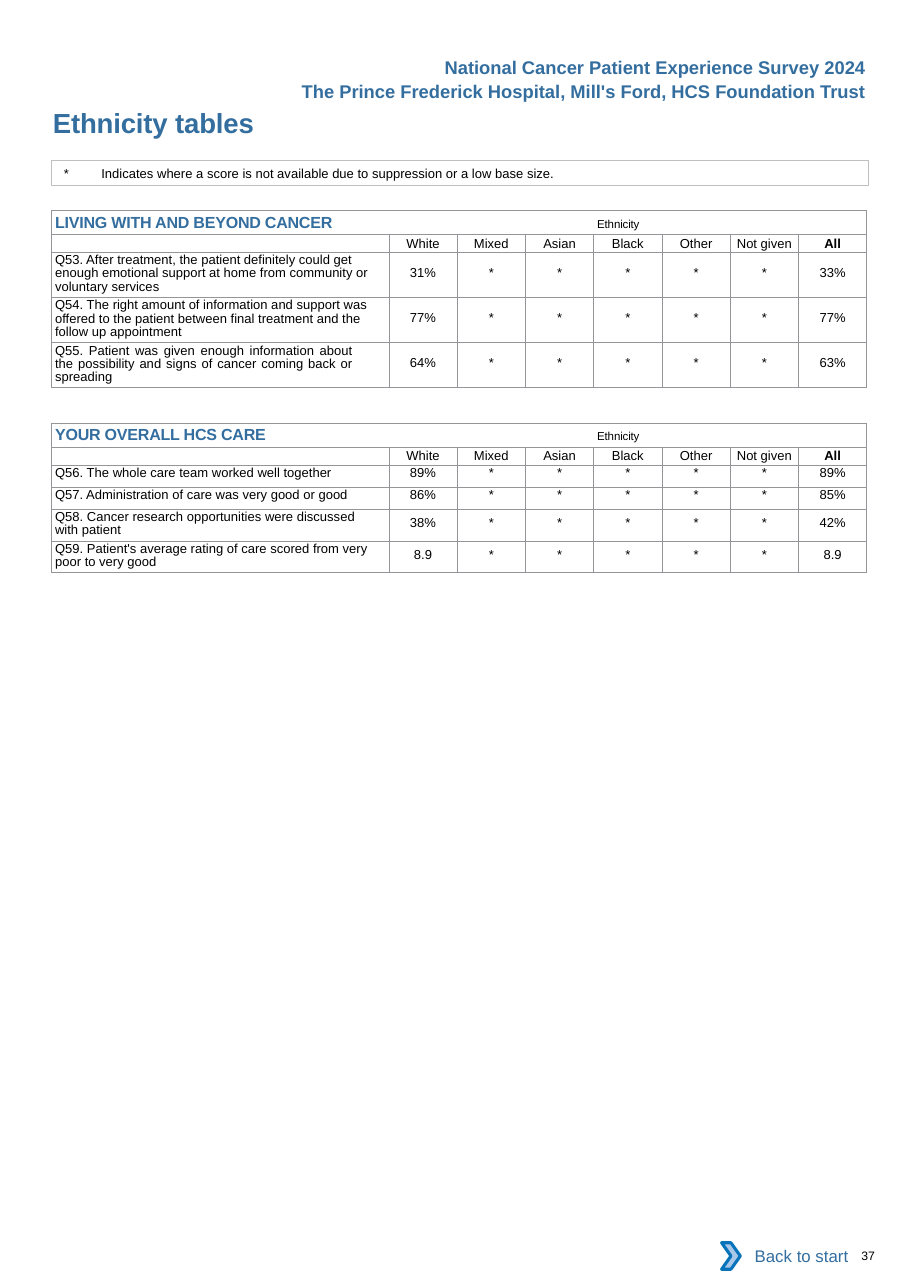
"""Build the ethnicity tables page of the patient experience survey."""
from dataclasses import dataclass
from typing import Optional

from lxml.etree import SubElement
from pptx import Presentation
from pptx.dml.color import RGBColor
from pptx.enum.shapes import MSO_SHAPE as Shape
from pptx.enum.text import MSO_ANCHOR as Anchor, PP_ALIGN as Align
from pptx.oxml.ns import qn
from pptx.util import Inches, Pt

BLUE, BLACK, WHITE = "336E9F", "000000", "FFFFFF"
GRID_GREY, NOTE_GREY = "939598", "BFBFBF"
LEFT, WIDTH = 0.47, 7.41
LABEL_WIDTH, GROUP_WIDTH = 3.06, 0.62
HEADING_HEIGHT, HEADER_HEIGHT = 0.22, 0.16
GROUPS = ("White", "Mixed", "Asian", "Black", "Other", "Not given", "All")


@dataclass(frozen=True)
class Style:
    size: float
    color: str = BLACK
    bold: bool = False
    spacing: float = 0


@dataclass(frozen=True)
class Question:
    text: str
    white: str
    overall: str
    lines: int
    justified: bool = False


@dataclass(frozen=True)
class Section:
    heading: str
    top: float
    questions: tuple[Question, ...]


@dataclass(frozen=True)
class RowLayout:
    height: float
    label_inset: float
    value_inset: float


BODY = Style(8.5)
HEADER_BOLD = Style(8.5, bold=True)
SECTION_HEADING = Style(10.5, BLUE, True, -0.1)
PAGE_HEADING = Style(12, BLUE, True)

ROW_LAYOUTS = {
    1: RowLayout(0.2, 0.01, 0.01),
    2: RowLayout(0.29, 0.02, 0.06),
    3: RowLayout(0.41, 0.02, 0.12),
}

SECTIONS = (
    Section("LIVING WITH AND BEYOND CANCER", 1.91, (
        Question("Q53. After treatment, the patient definitely could get enough emotional "
                 "support at home from community or voluntary services", "31%", "33%", 3),
        Question("Q54. The right amount of information and support was offered to the patient "
                 "between final treatment and the follow up appointment", "77%", "77%", 3),
        Question("Q55. Patient was given enough information about the possibility and signs "
                 "of cancer coming back or spreading", "64%", "63%", 3, True),
    )),
    Section("YOUR OVERALL HCS CARE", 3.84, (
        Question("Q56. The whole care team worked well together", "89%", "89%", 1),
        Question("Q57. Administration of care was very good or good", "86%", "85%", 1),
        Question("Q58. Cancer research opportunities were discussed with patient",
                 "38%", "42%", 2),
        Question("Q59. Patient's average rating of care scored from very poor to very good",
                 "8.9", "8.9", 2),
    )),
)

PAGE_HEADINGS = (
    ("National Cancer Patient Experience Survey 2024", 0.46),
    ("The Prince Frederick Hospital, Mill's Ford, HCS Foundation Trust", 0.68),
)


def rgb(color: str) -> RGBColor:
    """Turn a hex string into a colour."""
    return RGBColor.from_string(color)


def format_run(run, style: Style) -> None:
    """Apply a text style to a run."""
    run.font.name = "Arial"
    run.font.size = Pt(style.size)
    run.font.bold = style.bold
    run.font.color.rgb = rgb(style.color)
    if style.spacing:
        run.font._element.set("spc", str(round(style.spacing * 100)))


def write(text_frame, text: str, style: Style, align=Align.LEFT):
    """Write one styled paragraph and return it."""
    text_frame.text = text
    text_frame.word_wrap = True
    paragraph = text_frame.paragraphs[0]
    paragraph.alignment = align
    for run in paragraph.runs:
        format_run(run, style)
    return paragraph


def set_insets(frame, left: float = 0, top: float = 0, right: float = 0, bottom: float = 0) -> None:
    """Set the inner margins of a text frame or cell."""
    frame.margin_left, frame.margin_top = Inches(left), Inches(top)
    frame.margin_right, frame.margin_bottom = Inches(right), Inches(bottom)


def add_tab(paragraph, position: float) -> None:
    """Add a left tab stop to a paragraph."""
    tabs = SubElement(paragraph._p.get_or_add_pPr(), qn("a:tabLst"))
    SubElement(tabs, qn("a:tab"), pos=str(Inches(position)), algn="l")


def format_cell(cell) -> None:
    """Clear the fill of a cell and draw its thin borders."""
    properties = cell._tc.get_or_add_tcPr()
    for side in ("L", "R", "T", "B"):
        line = SubElement(properties, qn(f"a:ln{side}"), w=str(Pt(0.5)))
        fill = SubElement(line, qn("a:solidFill"))
        SubElement(fill, qn("a:srgbClr"), val=GRID_GREY)
    cell.fill.background()
    set_insets(cell)


def fill_question(cells, question: Question, layout: RowLayout) -> None:
    """Write the label and scores of one question."""
    label, *scores = cells
    set_insets(label, 0.03, layout.label_inset, 0.33 if question.justified else 0.15)
    align = Align.JUSTIFY if question.justified else Align.LEFT
    paragraph = write(label.text_frame, question.text, BODY, align)
    if question.lines > 1:
        paragraph.line_spacing = Pt(8.6)
    values = (question.white, *["*"] * (len(GROUPS) - 2), question.overall)
    for cell, value in zip(scores, values):
        set_insets(cell, top=layout.value_inset)
        write(cell.text_frame, value, BODY, Align.CENTER)


def add_section(slide, section: Section) -> None:
    """Add the score table of one survey section."""
    layouts = [ROW_LAYOUTS[question.lines] for question in section.questions]
    heights = [HEADING_HEIGHT, HEADER_HEIGHT, *(layout.height for layout in layouts)]
    table = slide.shapes.add_table(
        len(heights), len(GROUPS) + 1, Inches(LEFT), Inches(section.top),
        Inches(WIDTH), Inches(sum(heights))).table
    table.first_row = table.horz_banding = False
    for column, width in zip(table.columns, [LABEL_WIDTH] + [GROUP_WIDTH] * len(GROUPS)):
        column.width = Inches(width)
    for row, height in zip(table.rows, heights):
        row.height = Inches(height)
    for cell in table.iter_cells():
        format_cell(cell)

    heading = table.cell(0, 0)
    heading.merge(table.cell(0, len(GROUPS)))
    heading.vertical_anchor = Anchor.MIDDLE
    set_insets(heading, 0.03)
    paragraph = write(heading.text_frame, f"{section.heading}\t", SECTION_HEADING)
    add_tab(paragraph, 4.92)
    run = paragraph.add_run()
    run.text = "Ethnicity"
    format_run(run, Style(7.5, spacing=-0.1))

    corner = table.cell(1, 0).text_frame.paragraphs[0]
    SubElement(corner._p, qn("a:endParaRPr"), sz=str(round(BODY.size * 100)))
    for column, group in enumerate(GROUPS, 1):
        cell = table.cell(1, column)
        cell.vertical_anchor = Anchor.MIDDLE
        style = HEADER_BOLD if group == "All" else BODY
        write(cell.text_frame, group, style, Align.CENTER).line_spacing = Pt(9.9)
    for row, (question, layout) in enumerate(zip(section.questions, layouts), 2):
        fill_question(table.rows[row].cells, question, layout)


def add_box(shapes, kind, left: float, top: float, width: float, height: float,
            fill: Optional[str] = None, line: Optional[str] = None, weight: float = 0.5):
    """Add a preset shape with an optional fill and line."""
    shape = shapes.add_shape(kind, Inches(left), Inches(top), Inches(width), Inches(height))
    shape.shadow.inherit = False
    if fill:
        shape.fill.solid()
        shape.fill.fore_color.rgb = rgb(fill)
    else:
        shape.fill.background()
    if line:
        shape.line.color.rgb = rgb(line)
        shape.line.width = Pt(weight)
    else:
        shape.line.fill.background()
    return shape


def add_text(slide, text: str, left: float, top: float, width: float, height: float,
             style: Style, align=Align.LEFT):
    """Add a text box and return its text frame."""
    box = slide.shapes.add_textbox(Inches(left), Inches(top), Inches(width), Inches(height))
    write(box.text_frame, text, style, align)
    return box.text_frame


def main() -> None:
    """Build and save the page."""
    presentation = Presentation()
    presentation.slide_width, presentation.slide_height = Inches(8.26), Inches(11.69)
    slide = presentation.slides.add_slide(presentation.slide_layouts[5])

    title = slide.shapes.title
    title.left, title.top = Inches(LEFT), Inches(0.96)
    title.width, title.height = Inches(4.5), Inches(0.3)
    write(title.text_frame, "Ethnicity tables", Style(18, BLUE, True, -0.1))
    title.text_frame.vertical_anchor = Anchor.TOP
    set_insets(title.text_frame, 0.01)

    for section in SECTIONS:
        add_section(slide, section)

    note = add_box(slide.shapes, Shape.RECTANGLE, LEFT, 1.46, WIDTH, 0.22, line=NOTE_GREY)
    note.text_frame.vertical_anchor = Anchor.TOP
    set_insets(note.text_frame, 0.11, 0.04, 0, 0.04)
    add_tab(write(note.text_frame, "*\tIndicates where a score is not available due to "
                  "suppression or a low base size.", BODY), 0.34)

    for text, top in PAGE_HEADINGS:
        add_text(slide, text, 1.96, top, 6, 0.3, PAGE_HEADING, Align.RIGHT)
    set_insets(add_text(slide, "37", 7.72, 11.33, 0.51, 0.13, Style(8)), 0.1)

    back_link = slide.shapes.add_group_shape().shapes
    label = add_box(back_link, Shape.RECTANGLE, 6.62, 11.19, 1.18, 0.42, WHITE)
    label.text_frame.vertical_anchor = Anchor.MIDDLE
    write(label.text_frame, "Back to start", Style(11, BLUE), Align.RIGHT)
    add_box(back_link, Shape.CHEVRON, 6.55, 11.28, 0.17, 0.24, "A8C7E9", "0A74BB", 2)

    presentation.save("out.pptx")


if __name__ == "__main__":
    main()
